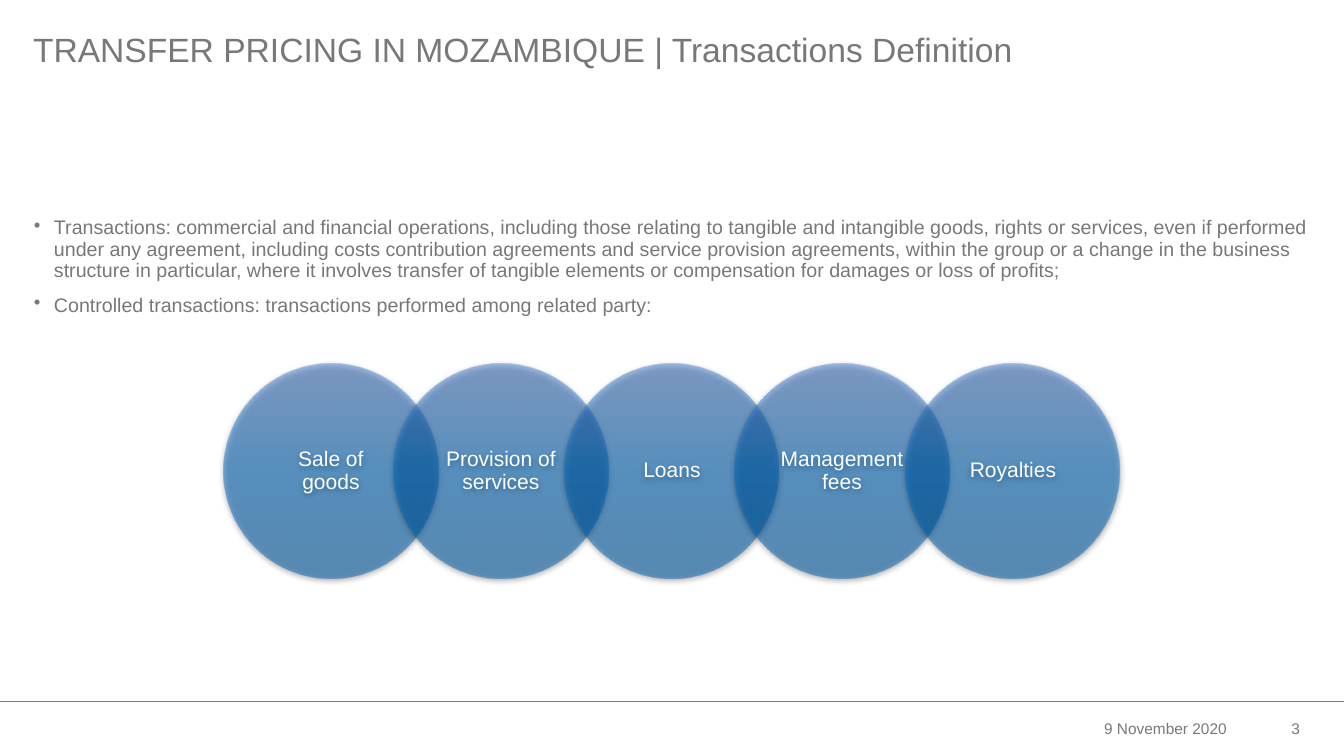
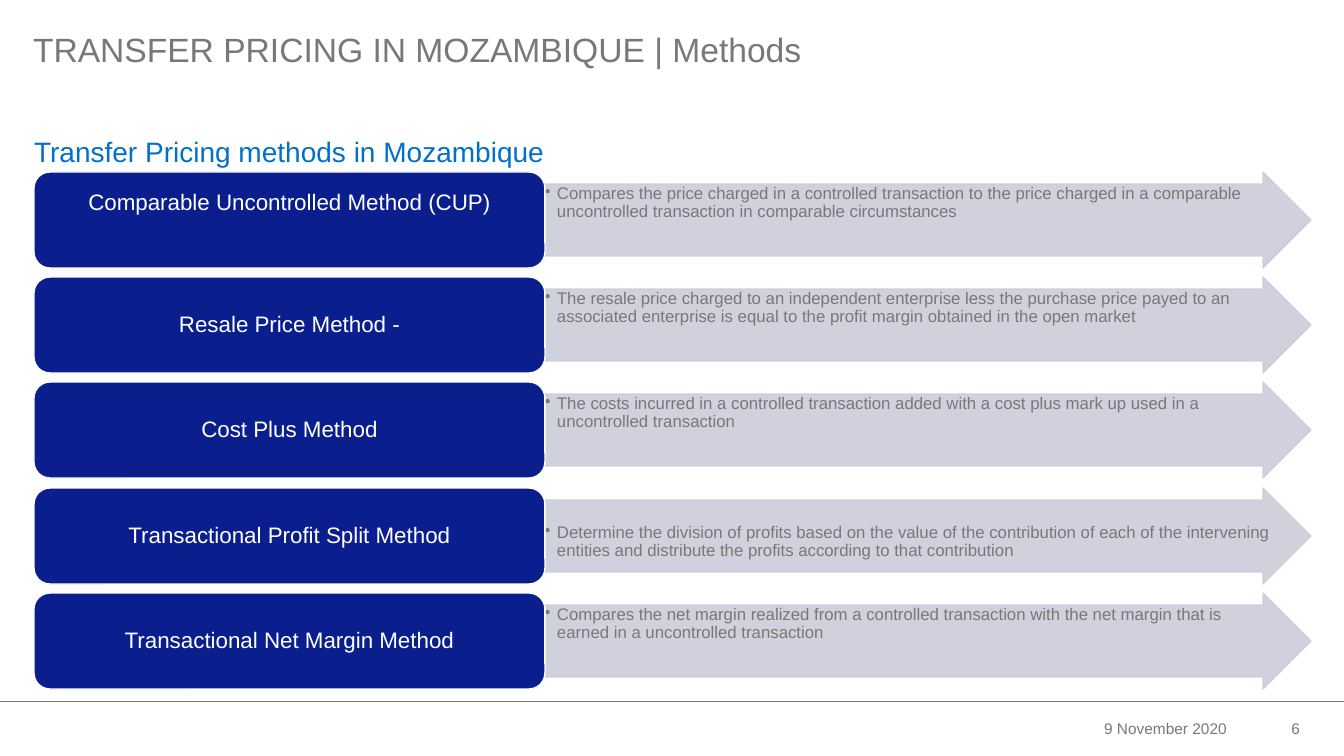
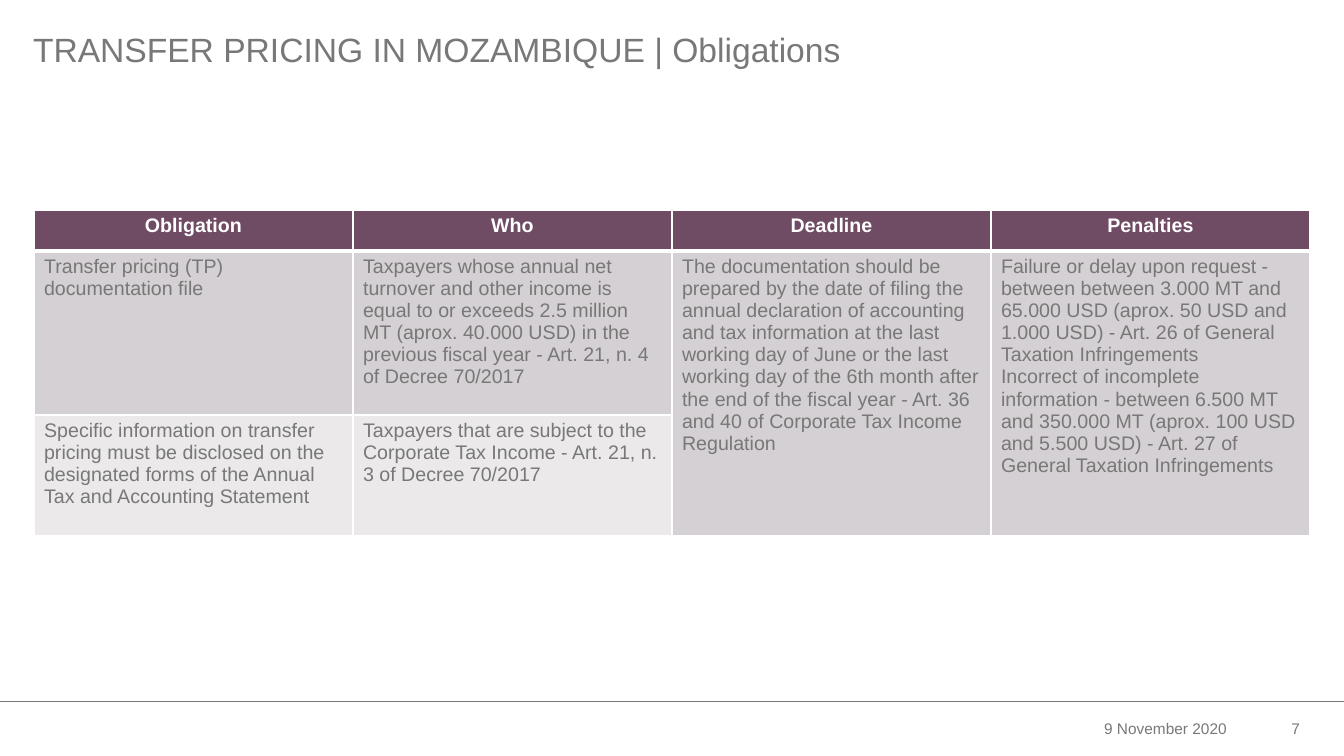
from dataclasses import dataclass

from lxml import etree
from pptx import Presentation
from pptx.dml.color import RGBColor
from pptx.enum.shapes import MSO_CONNECTOR, MSO_SHAPE
from pptx.enum.text import MSO_ANCHOR, PP_ALIGN
from pptx.oxml.ns import qn
from pptx.util import Emu, Pt

CENTER, RIGHT = PP_ALIGN.CENTER, PP_ALIGN.RIGHT
MIDDLE = MSO_ANCHOR.MIDDLE
OVAL, ROUND_RECT, ARROW = MSO_SHAPE.OVAL, MSO_SHAPE.ROUNDED_RECTANGLE, MSO_SHAPE.RIGHT_ARROW
STRAIGHT = MSO_CONNECTOR.STRAIGHT
SCALE = 914400 / 100.8


@dataclass(frozen=True)
class Theme:
    font: str = "Arial"
    grey: str = "777877"
    white: str = "FFFFFF"
    blue: str = "0070CD"
    navy: str = "0A1E8E"
    arrow: str = "CCCDDB"
    plum: str = "6F4C63"
    band_dark: str = "D5D0D3"
    band_light: str = "EBE9EA"
    shadow: str = "000000"
    circle: tuple = ("4B81D4", "0070CD", "0064B6")
    title_size: int = 24
    heading_size: int = 20
    method_size: int = 16
    circle_size: int = 15
    body_size: int = 14
    note_size: int = 12
    footer_size: int = 11


T = Theme()


def px(value):
    return Emu(round(value * SCALE))


def write(tf, *texts, size=T.body_size, color=T.grey, bold=False, align=None, anchor=None,
          insets=None, spacing=None, before=0, indent=0):
    tf.word_wrap = True
    if anchor is not None:
        tf.vertical_anchor = anchor
    if insets:
        tf.margin_left, tf.margin_top, tf.margin_right, tf.margin_bottom = map(px, insets)
    for i, text in enumerate(texts):
        p = tf.add_paragraph() if i else tf.paragraphs[0]
        if indent:
            pPr = p._p.get_or_add_pPr()
            pPr.set("marL", str(px(indent)))
            pPr.set("indent", str(-px(indent)))
            etree.SubElement(pPr, qn("a:buChar"), char="•")
        p.alignment = align
        if spacing:
            p.line_spacing = spacing
        if i and before:
            p.space_before = Pt(before)
        r = p.add_run()
        r.text = text
        r.font.name = T.font
        r.font.size = Pt(size)
        r.font.bold = bold
        r.font.color.rgb = RGBColor.from_string(color)


prs = Presentation()
prs.slide_width, prs.slide_height = px(1344), px(756)

slides = []
for topic, number in (("Transactions Definition", 3), ("Methods", 6), ("Obligations", 7)):
    s = prs.slides.add_slide(prs.slide_layouts[6])
    slides.append(s)
    rule = s.shapes.add_connector(STRAIGHT, 0, px(701), px(1344), px(701))
    rule.line.color.rgb = RGBColor.from_string(T.grey)
    rule.line.width = Pt(0.5)
    etree.SubElement(rule._element.spPr, qn("a:effectLst"))
    for text, left, width in (("9 November 2020", 913, 324), (str(number), 1164, 146)):
        box = s.shapes.add_textbox(px(left), px(702), px(width), px(53))
        write(box.text_frame, text, size=T.footer_size, align=RIGHT, anchor=MIDDLE,
              insets=(10, 5, 10, 5))
    box = s.shapes.add_textbox(px(33), px(33), px(1276), px(39))
    write(box.text_frame, f"TRANSFER PRICING IN MOZAMBIQUE | {topic}", size=T.title_size,
          insets=(0, 0, 0, 5), spacing=0.9)

definition, methods, obligations = slides

box = definition.shapes.add_textbox(px(34), px(210), px(1277), px(458))
write(
    box.text_frame,
    "Transactions: commercial and financial operations, including those relating to tangible and "
    "intangible goods, rights or services, even if performed under any agreement, including costs "
    "contribution agreements and service provision agreements, within the group or a change in the "
    "business structure in particular, where it involves transfer of tangible elements or "
    "compensation for damages or loss of profits;",
    "Controlled transactions: transactions performed among related party:",
    insets=(0, 8, 0, 8), spacing=0.9, before=10, indent=20)

kinds = ("Sale of goods", "Provision of services", "Loans", "Management fees", "Royalties")
for i, kind in enumerate(kinds):
    sp = definition.shapes.add_shape(OVAL, px(224 + i * 341 // 2), px(364), px(214), px(214))
    sp.line.fill.background()
    sp.fill.gradient()
    sp.fill.gradient_angle = 270
    spPr = sp._element.spPr
    stops = spPr.find(".//" + qn("a:gsLst"))
    stops.clear()
    for j, color in enumerate(T.circle):
        stop = etree.SubElement(stops, qn("a:gs"), pos=str(j * 50000))
        clr = etree.SubElement(stop, qn("a:srgbClr"), val=color)
        etree.SubElement(clr, qn("a:alpha"), val="50000")
    sp.shadow.inherit = False
    shadow = etree.SubElement(spPr.find(qn("a:effectLst")), qn("a:outerShdw"),
                              blurRad=str(Pt(4.5)), dist=str(Pt(1.5)), dir="5400000",
                              rotWithShape="0")
    clr = etree.SubElement(shadow, qn("a:srgbClr"), val=T.shadow)
    etree.SubElement(clr, qn("a:alpha"), val="63000")
    write(sp.text_frame, kind, size=T.circle_size, color=T.white, align=CENTER, anchor=MIDDLE,
          insets=(12, 2, 12, 2), spacing=0.9)

box = methods.shapes.add_textbox(px(34), px(135), px(1276), px(37))
write(box.text_frame, "Transfer Pricing methods in Mozambique", size=T.heading_size,
      color=T.blue, insets=(0, 0, 20, 8))

rows = (
    ("Comparable Uncontrolled Method (CUP)", 37,
     "Compares the price charged in a controlled transaction to the price charged in a comparable "
     "uncontrolled transaction in comparable circumstances", 1),
    ("Resale Price Method -", 3,
     "The resale price charged to an independent enterprise less the purchase price payed to an "
     "associated enterprise is equal to the profit margin obtained in the open market", 1),
    ("Cost Plus Method", 3,
     "The costs incurred in a controlled transaction added with a cost plus mark up used in a "
     "uncontrolled transaction", 1),
    ("Transactional Profit Split Method", 3,
     "Determine the division of profits based on the value of the contribution of each of the "
     "intervening entities and distribute the profits according to that contribution", 24),
    ("Transactional Net Margin Method", 3,
     "Compares the net margin realized from a controlled transaction with the net margin that is "
     "earned in a uncontrolled transaction", 1),
)
for i, (name, name_bottom, note, note_top) in enumerate(rows):
    top = px(172 + i * 527 // 5)
    sp = methods.shapes.add_shape(ARROW, px(544), top, px(767), px(96))
    sp.adjustments[0], sp.adjustments[1] = 0.75, 0.5
    sp.shadow.inherit = False
    sp.fill.solid()
    sp.fill.fore_color.rgb = RGBColor.from_string(T.arrow)
    sp.line.color.rgb = RGBColor.from_string(T.arrow)
    sp.line.width = Pt(1)
    for clr in sp._element.spPr.iter(qn("a:srgbClr")):
        etree.SubElement(clr, qn("a:alpha"), val="90000")
    write(sp.text_frame, note, size=T.note_size, align=PP_ALIGN.LEFT, anchor=MSO_ANCHOR.TOP,
          insets=(1, note_top, 1, 1), spacing=0.9, indent=12)

    sp = methods.shapes.add_shape(ROUND_RECT, px(34), top, px(511), px(96))
    sp.shadow.inherit = False
    sp.fill.solid()
    sp.fill.fore_color.rgb = RGBColor.from_string(T.navy)
    sp.line.color.rgb = RGBColor.from_string(T.white)
    sp.line.width = Pt(1)
    write(sp.text_frame, name, size=T.method_size, color=T.white, align=CENTER, anchor=MIDDLE,
          insets=(7, 3, 7, name_bottom), spacing=0.9)

table_rows = (
    (("Obligation",), ("Who",), ("Deadline",), ("Penalties",)),
    (
        ("Transfer pricing (TP) documentation file",),
        ("Taxpayers whose annual net turnover and other income is equal to or exceeds 2.5 million "
         "MT (aprox. 40.000 USD) in the previous fiscal year - Art. 21, n. 4 of Decree 70/2017",),
        ("The documentation should be prepared by the date of filing the annual declaration of "
         "accounting and tax information at the last working day of June or the last working day "
         "of the 6th month after the end of the fiscal year - Art. 36 and 40 of Corporate Tax "
         "Income Regulation",),
        ("Failure or delay upon request - between between 3.000 MT and 65.000 USD (aprox. 50 USD "
         "and 1.000 USD) - Art. 26 of General Taxation Infringements",
         "Incorrect of incomplete information - between 6.500 MT and 350.000 MT (aprox. 100 USD "
         "and 5.500 USD) - Art. 27 of General Taxation Infringements"),
    ),
    (
        ("Specific information on transfer pricing must be disclosed on the designated forms of "
         "the Annual Tax and Accounting Statement",),
        ("Taxpayers that are subject to the Corporate Tax Income - Art. 21, n. 3 of Decree "
         "70/2017",),
        (), (),
    ),
)
heights = (41, 164, 121)
fills = (T.plum, T.band_dark, T.band_light)
table = obligations.shapes.add_table(3, 4, px(34), px(210), px(1276), px(sum(heights))).table
for column in table.columns:
    column.width = px(319)
for i, texts in enumerate(table_rows):
    table.rows[i].height = px(heights[i])
    header = i == 0
    for j, paragraphs in enumerate(texts):
        cell = table.cell(i, j)
        cell.fill.solid()
        cell.fill.fore_color.rgb = RGBColor.from_string(fills[i])
        tcPr = cell._tc.get_or_add_tcPr()
        widths = (1, 1, 3 if i == 1 else 1, 3 if header else 1)
        for k, (side, width) in enumerate(zip("LRTB", widths)):
            ln = etree.Element(qn(f"a:ln{side}"), w=str(Pt(width)))
            fill = etree.SubElement(ln, qn("a:solidFill"))
            etree.SubElement(fill, qn("a:srgbClr"), val=T.white)
            tcPr.insert(k, ln)
        if paragraphs:
            write(cell.text_frame, *paragraphs, bold=header,
                  color=T.white if header else T.grey, align=CENTER if header else None)
for j in (2, 3):
    table.cell(1, j).merge(table.cell(2, j))

prs.save("out.pptx")
